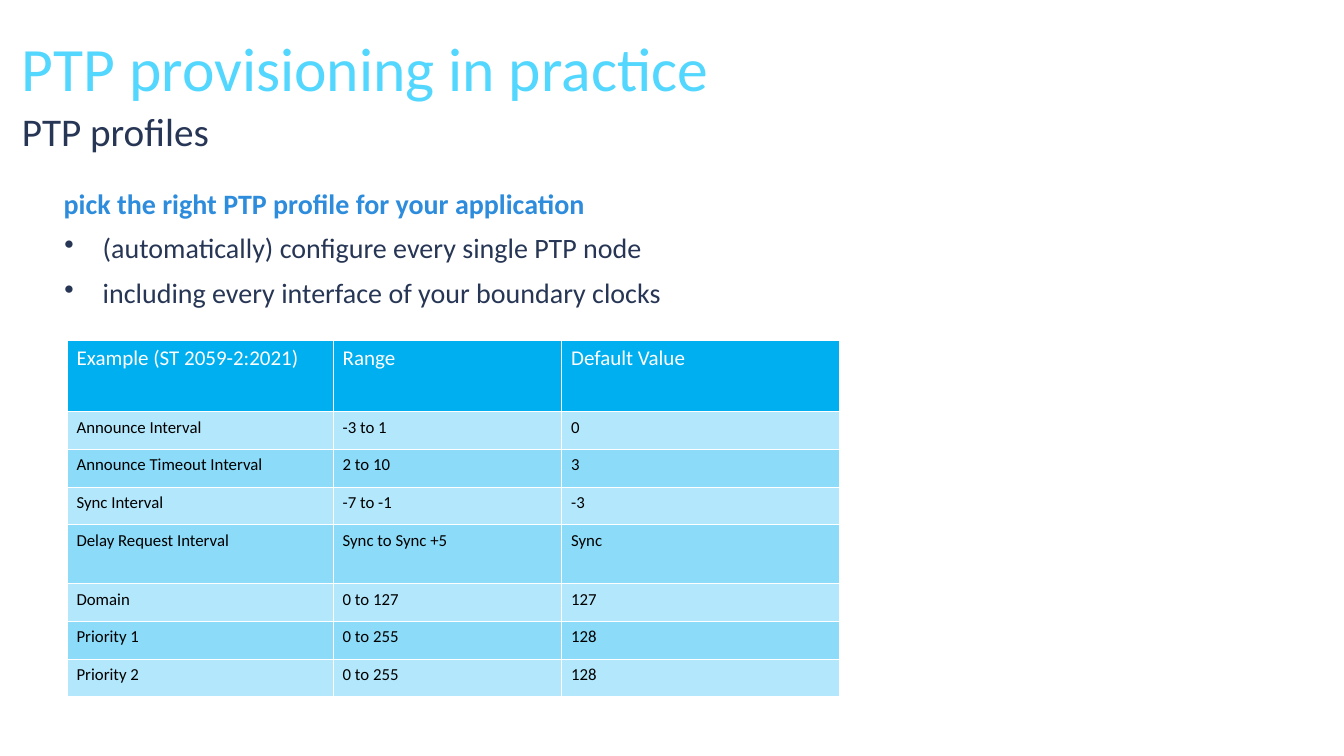
import dataclasses

import lxml.etree
import pptx
import pptx.dml.color
import pptx.oxml.ns
import pptx.util


@dataclasses.dataclass(frozen=True)
class Theme:
    font: str = "Calibri"
    title: str = "53D7FE"
    ink: str = "273655"
    accent: str = "2D8CDC"
    white: str = "FFFFFF"
    black: str = "000000"
    header_fill: str = "00AFF0"
    band_fills: tuple = ("B3E7FB", "8CDBF8")
    title_size: int = 44
    subtitle_size: int = 28
    body_size: int = 20
    header_size: int = 15
    cell_size: int = 12
    line_spacing: float = 0.9
    space_before: int = 10
    border: int = 1


def px(length):
    """Convert pixels, 150 to the inch, into EMU."""
    return pptx.util.Emu(length * 6096)


def rgb(color):
    return pptx.dml.color.RGBColor.from_string(color)


def add_element(parent, tag, **attributes):
    element = lxml.etree.SubElement(parent, pptx.oxml.ns.qn(tag))
    for name, value in attributes.items():
        element.set(name, str(value))
    return element


class SlideBuilder:
    def __init__(self, slide, theme):
        self.slide = slide
        self.theme = theme

    def style(self, paragraph, size, color, bold=False):
        for run in paragraph.runs:
            run.font.name = self.theme.font
            run.font.size = pptx.util.Pt(size)
            run.font.bold = bold
            run.font.color.rgb = rgb(color)

    def text_box(self, left, top, width, height, lines):
        """Each line is (text, size, color, bold, bulleted)."""
        box = self.slide.shapes.add_textbox(px(left), px(top), px(width), px(height))
        frame = box.text_frame
        frame.word_wrap = True
        frame.text = "\n".join(line[0] for line in lines)
        for index, (paragraph, line) in enumerate(zip(frame.paragraphs, lines)):
            _, size, color, bold, bulleted = line
            if bulleted:
                self.bullet(paragraph, color)
            paragraph.line_spacing = self.theme.line_spacing
            if index:
                paragraph.space_before = pptx.util.Pt(self.theme.space_before)
            self.style(paragraph, size, color, bold)

    def bullet(self, paragraph, color):
        properties = paragraph._p.get_or_add_pPr()
        properties.set("marL", str(px(58)))
        properties.set("indent", str(px(-57)))
        bullet_color = add_element(properties, "a:buClr")
        add_element(bullet_color, "a:srgbClr", val=color)
        add_element(properties, "a:buChar", char="•")

    def table(self, left, top, column_widths, row_heights, rows):
        table = self.slide.shapes.add_table(
            len(rows), len(column_widths), px(left), px(top),
            px(sum(column_widths)), px(sum(row_heights))).table
        table.horz_banding = False
        for column, width in zip(table.columns, column_widths):
            column.width = px(width)
        for index, (row, height, texts) in enumerate(zip(table.rows, row_heights, rows)):
            row.height = px(height)
            if index == 0:
                look = self.theme.header_fill, self.theme.header_size, self.theme.white
            else:
                look = self.theme.band_fills[(index - 1) % 2], self.theme.cell_size, self.theme.black
            for cell, text in zip(row.cells, texts):
                self.cell(cell, text, *look)

    def cell(self, cell, text, fill, size, color):
        cell.text = text
        self.style(cell.text_frame.paragraphs[0], size, color)
        cell.margin_left = cell.margin_right = px(14)
        cell.margin_top = cell.margin_bottom = px(8)
        properties = cell._tc.get_or_add_tcPr()
        for side in ("a:lnL", "a:lnR", "a:lnT", "a:lnB"):
            border = add_element(properties, side, w=pptx.util.Pt(self.theme.border))
            solid = add_element(border, "a:solidFill")
            add_element(solid, "a:srgbClr", val=self.theme.white)
        cell.fill.solid()
        cell.fill.fore_color.rgb = rgb(fill)


def main():
    theme = Theme()
    presentation = pptx.Presentation()
    presentation.slide_width = px(2000)
    presentation.slide_height = px(1125)
    slide = presentation.slides.add_slide(presentation.slide_layouts[6])
    builder = SlideBuilder(slide, theme)

    # Headings
    builder.text_box(18, 160, 1725, 128, [
        ("PTP profiles", theme.subtitle_size, theme.ink, False, False)])
    builder.text_box(18, 50, 1725, 82, [
        ("PTP provisioning in practice", theme.title_size, theme.title, False, False)])

    # Advice
    builder.text_box(80, 276, 1167, 210, [
        ("pick the right PTP profile for your application",
         theme.body_size, theme.accent, True, False),
        ("(automatically) configure every single PTP node",
         theme.body_size, theme.ink, False, True),
        ("including every interface of your boundary clocks",
         theme.body_size, theme.ink, False, True),
    ])

    # Profile parameters
    profile = [
        ("Example (ST 2059-2:2021)", "Range", "Default Value"),
        ("Announce Interval", "-3 to 1", "0"),
        ("Announce Timeout Interval", "2 to 10", "3"),
        ("Sync Interval", "-7 to -1", "-3"),
        ("Delay Request Interval", "Sync to Sync +5", "Sync"),
        ("Domain", "0 to 127", "127"),
        ("Priority 1", "0 to 255", "128"),
        ("Priority 2", "0 to 255", "128"),
    ]
    row_heights = [107] + [56] * 3 + [88] + [56] * 3
    builder.table(100, 506, (396, 340, 414), row_heights, profile)

    presentation.save("out.pptx")


if __name__ == "__main__":
    main()
